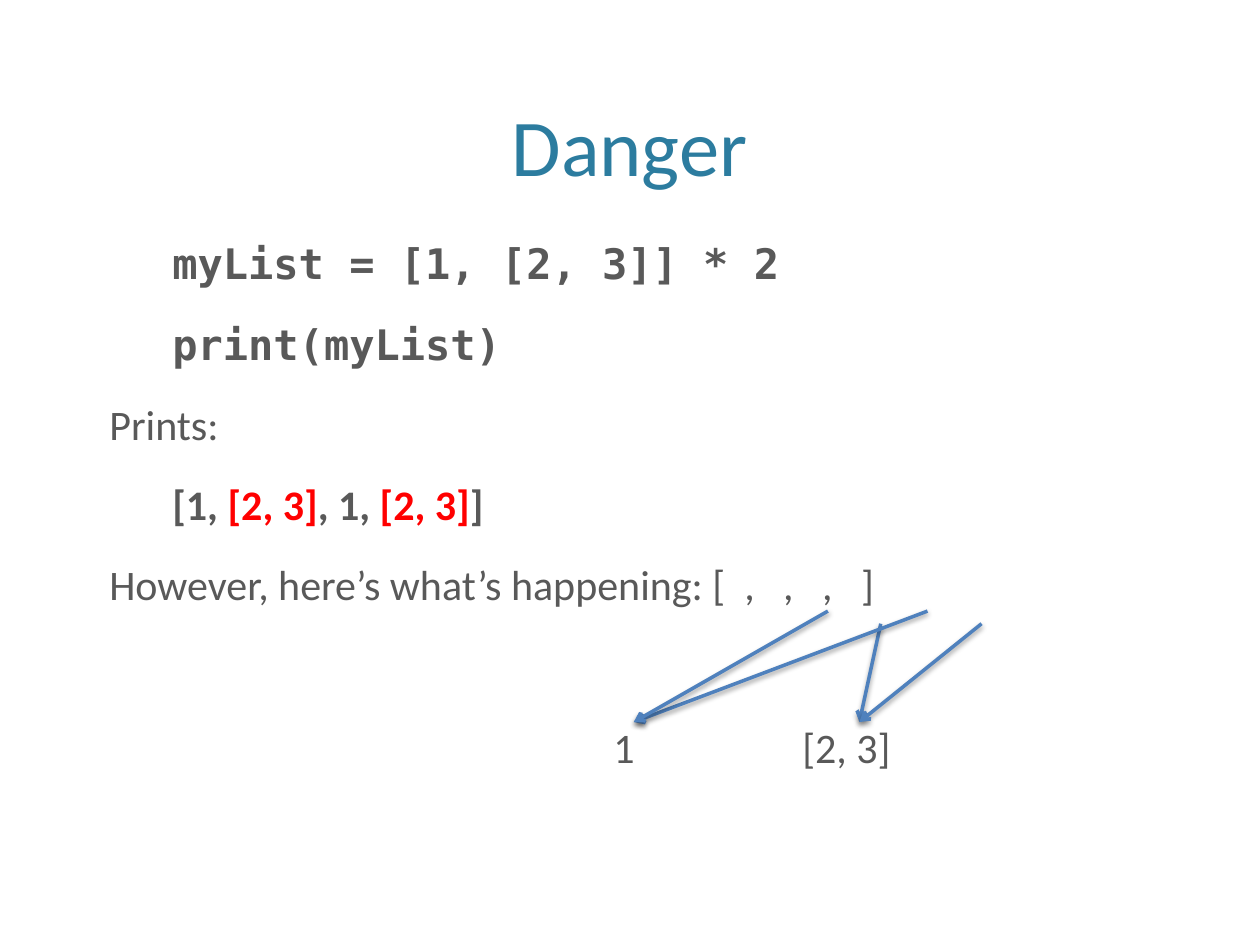
import pptx
import pptx.util
import pptx.dml.color
import pptx.enum.shapes
import pptx.enum.text
import pptx.oxml
import pptx.oxml.ns

Pt = pptx.util.Pt
RGBColor = pptx.dml.color.RGBColor
TEAL = RGBColor(0x2C, 0x7C, 0x9F)
GRAY = RGBColor(0x59, 0x59, 0x59)
RED = RGBColor(0xFF, 0x00, 0x00)
BLUE = RGBColor(0x4F, 0x81, 0xBD)
SANS, MONO = "Calibri", "DejaVu Sans Mono"
NS = pptx.oxml.ns.nsdecls("a")
SHADOW = (
    f'<a:effectLst {NS}><a:outerShdw blurRad="{Pt(3.1)}" dist="{Pt(1.6)}" dir="5400000" rotWithShape="0">'
    '<a:srgbClr val="000000"><a:alpha val="38000"/></a:srgbClr></a:outerShdw></a:effectLst>'
)


def add_text_frame(s, x, y, w, h):
    """Add a wrapping text box and return its text frame."""
    tf = s.shapes.add_textbox(Pt(x), Pt(y), Pt(w), Pt(h)).text_frame
    tf.word_wrap = True
    return tf


def style_font(font, name, size, color, bold=False):
    """Set the face, size, colour and weight of a font."""
    font.name, font.size, font.bold = name, Pt(size), bold
    font.color.rgb = color


def add_title(s, x, y, w, h):
    """Place the centred title at the bottom of its box."""
    tf = add_text_frame(s, x, y, w, h)
    tf.vertical_anchor = pptx.enum.text.MSO_ANCHOR.BOTTOM
    p = tf.paragraphs[0]
    p.text = "Danger"
    p.alignment = pptx.enum.text.PP_ALIGN.CENTER
    style_font(p.font, SANS, 46, TEAL)


def add_body(s, x, y, w, h):
    """Write the code, its output and the list with open slots."""
    lines = [
        (["myList = [1, [2, 3]] * 2"], MONO, True, 36),
        (["print(myList)"], MONO, True, 36),
        (["Prints:"], SANS, False, 0),
        (["[1, ", "[2, 3]", ", 1, ", "[2, 3]", "]"], SANS, True, 36),
        (["However, here’s what’s happening: [  ,   ,   ,   ]"], SANS, False, 0),
    ]
    tf = add_text_frame(s, x, y, w, h)
    for i, (parts, face, bold, indent) in enumerate(lines):
        p = tf.add_paragraph() if i else tf.paragraphs[0]
        p.line_spacing = 0.8
        p.space_before = Pt(22.8 if i else 0)
        pPr = p._p.get_or_add_pPr()
        pPr.set("marL", str(Pt(indent)))
        pPr.set("indent", "0")
        style_font(p.font, face, 24, GRAY, bold)
        for j, part in enumerate(parts):
            r = p.add_run()
            r.text = part
            if j % 2:
                r.font.color.rgb = RED


def add_arrow(s, x1, y1, x2, y2):
    """Draw a shadowed reference arrow between two points."""
    c = s.shapes.add_connector(
        pptx.enum.shapes.MSO_CONNECTOR.STRAIGHT, Pt(x1), Pt(y1), Pt(x2), Pt(y2)
    )
    c.line.color.rgb = BLUE
    c.line.width = Pt(2)
    c.line._get_or_add_ln().append(pptx.oxml.parse_xml(f'<a:tailEnd {NS} type="arrow"/>'))
    c._element.spPr.append(pptx.oxml.parse_xml(SHADOW))


def add_references(s, x, y, w, h):
    """Point the four list slots at the two shared values below."""
    for i, value in enumerate(["1", "[2, 3]"]):
        tf = add_text_frame(s, x - 18.8 + 108 * i, y + h + 1.6, 90, 32)
        p = tf.paragraphs[0]
        p.text = value
        p.line_spacing = 0.8
        style_font(p.font, SANS, 24, GRAY)
    number, inner = 0, 128.9
    for start, drop, target in [
        (inner + 12.2, 7.2, inner),
        (w, 7.2, inner),
        (167.8, 0, number),
        (110.9, 0, number),
    ]:
        add_arrow(s, x + start, y + drop, x + target, y + h)


def main():
    """Build the slide and save it."""
    prs = pptx.Presentation()
    prs.slide_width, prs.slide_height = Pt(720), Pt(540)
    s = prs.slides.add_slide(prs.slide_layouts[6])
    add_title(s, 43.2, 8.6, 632.9, 105.1)
    add_body(s, 55.4, 138, 632.9, 342)
    add_references(s, 362.2, 349.2, 198.7, 63.4)
    prs.save("out.pptx")


if __name__ == "__main__":
    main()
